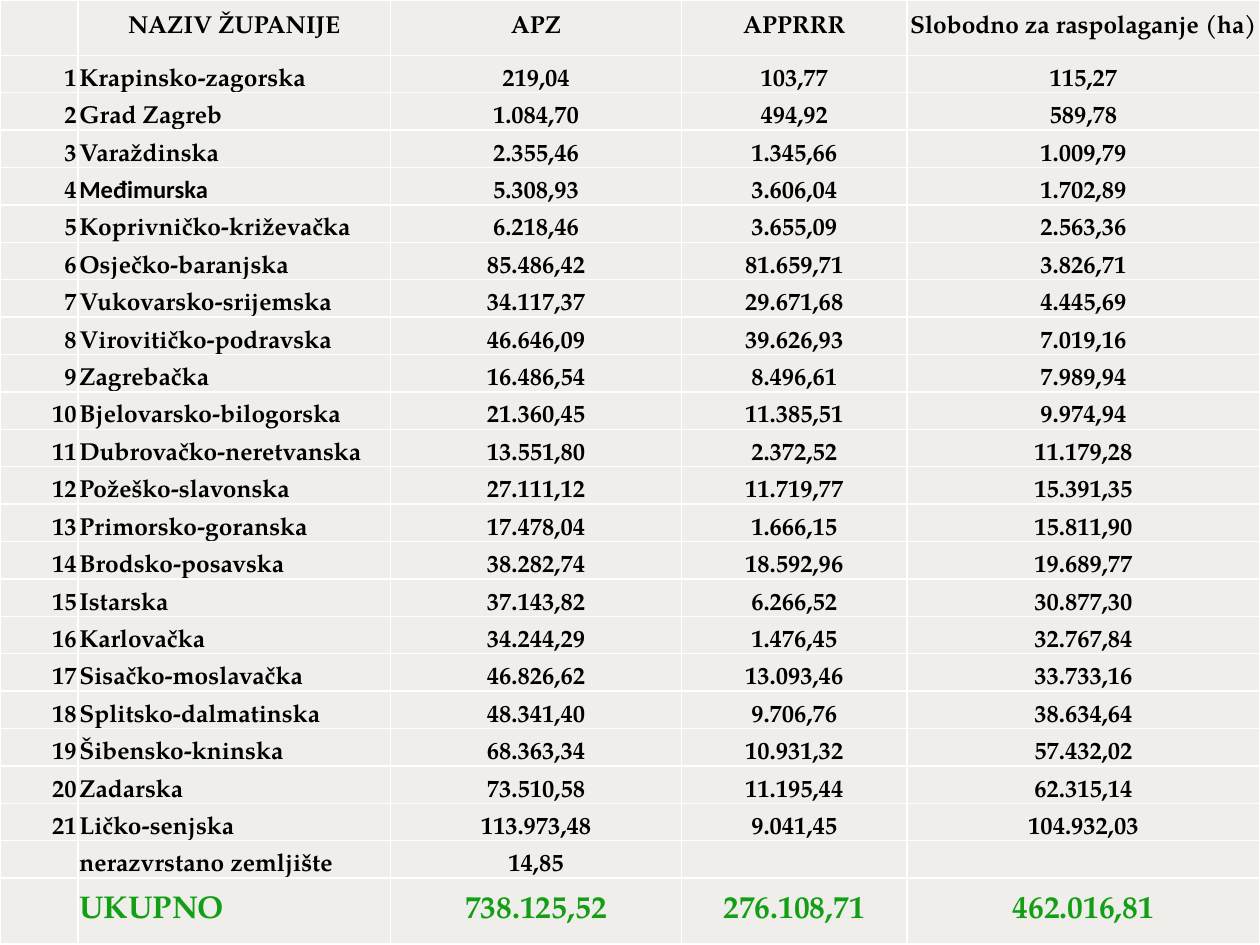
"""Build a slide with a table of agricultural land by Croatian county."""
from lxml.etree import SubElement
from pptx import Presentation
from pptx.dml.color import RGBColor
from pptx.enum.text import MSO_ANCHOR as Anchor, PP_ALIGN as Align
from pptx.oxml import parse_xml
from pptx.oxml.ns import nsdecls, qn
from pptx.util import Pt

HEADER = ("", "NAZIV ŽUPANIJE", "APZ", "APPRRR", "Slobodno za raspolaganje (ha)")
COUNTIES = [
    ("Krapinsko-zagorska", "219,04", "103,77", "115,27"),
    ("Grad Zagreb", "1.084,70", "494,92", "589,78"),
    ("Varaždinska", "2.355,46", "1.345,66", "1.009,79"),
    ("Međimurska", "5.308,93", "3.606,04", "1.702,89"),
    ("Koprivničko-križevačka", "6.218,46", "3.655,09", "2.563,36"),
    ("Osječko-baranjska", "85.486,42", "81.659,71", "3.826,71"),
    ("Vukovarsko-srijemska", "34.117,37", "29.671,68", "4.445,69"),
    ("Virovitičko-podravska", "46.646,09", "39.626,93", "7.019,16"),
    ("Zagrebačka", "16.486,54", "8.496,61", "7.989,94"),
    ("Bjelovarsko-bilogorska", "21.360,45", "11.385,51", "9.974,94"),
    ("Dubrovačko-neretvanska", "13.551,80", "2.372,52", "11.179,28"),
    ("Požeško-slavonska", "27.111,12", "11.719,77", "15.391,35"),
    ("Primorsko-goranska", "17.478,04", "1.666,15", "15.811,90"),
    ("Brodsko-posavska", "38.282,74", "18.592,96", "19.689,77"),
    ("Istarska", "37.143,82", "6.266,52", "30.877,30"),
    ("Karlovačka", "34.244,29", "1.476,45", "32.767,84"),
    ("Sisačko-moslavačka", "46.826,62", "13.093,46", "33.733,16"),
    ("Splitsko-dalmatinska", "48.341,40", "9.706,76", "38.634,64"),
    ("Šibensko-kninska", "68.363,34", "10.931,32", "57.432,02"),
    ("Zadarska", "73.510,58", "11.195,44", "62.315,14"),
    ("Ličko-senjska", "113.973,48", "9.041,45", "104.932,03"),
]
UNSORTED = ("", "nerazvrstano zemljište", "14,85", "", "")
TOTAL = ("", "UKUPNO", "738.125,52", "276.108,71", "462.016,81")

WIDTH, HEIGHT = 720, 540
COLUMN_WIDTHS = (44.6, 178.6, 166.3, 128.9, 201.6)
HEADER_HEIGHT, TOTAL_HEIGHT = 31.6, 37.6
ALIGNMENTS = (Align.RIGHT, Align.LEFT, Align.CENTER, Align.CENTER, Align.CENTER)
FONT = "TeX Gyre Pagella"
FONT_EXCEPTIONS = {"Međimurska": "Calibri"}
BLACK = RGBColor(0x00, 0x00, 0x00)
GREEN = RGBColor(0x12, 0x9E, 0x15)
SAND = RGBColor(0xF0, 0xEE, 0xEA)
WHITE = RGBColor(0xFF, 0xFF, 0xFF)


def add_borders(cell):
    properties = cell._tc.get_or_add_tcPr()
    for index, side in enumerate(("lnL", "lnR", "lnT", "lnB")):
        properties.insert(index, parse_xml(
            f'<a:{side} {nsdecls("a")} w="{Pt(1)}"><a:solidFill>'
            f'<a:srgbClr val="{WHITE}"/></a:solidFill></a:{side}>'))


def fill_cell(cell, text, alignment, anchor, size, color):
    cell.fill.solid()
    cell.fill.fore_color.rgb = SAND
    add_borders(cell)
    cell.margin_left = cell.margin_right = cell.margin_top = Pt(0.75)
    cell.margin_bottom = 0
    cell.vertical_anchor = anchor
    para = cell.text_frame.paragraphs[0]
    if not text:
        SubElement(para._p, qn("a:endParaRPr")).set("sz", str(size * 100))
        return
    para.text = text
    para.alignment = alignment
    font = para.runs[0].font
    font.name = FONT_EXCEPTIONS.get(text, FONT)
    font.size = Pt(size)
    font.bold = True
    font.color.rgb = color


def main():
    deck = Presentation()
    deck.slide_width, deck.slide_height = Pt(WIDTH), Pt(HEIGHT)
    page = deck.slides.add_slide(deck.slide_layouts[6])
    numbered = [(str(number), *county) for number, county in enumerate(COUNTIES, 1)]
    rows = [HEADER, *numbered, UNSORTED, TOTAL]
    last = len(rows) - 1
    body_height = (HEIGHT - HEADER_HEIGHT - TOTAL_HEIGHT) / (last - 1)

    table = page.shapes.add_table(
        len(rows), len(HEADER), 0, 0, Pt(WIDTH), Pt(HEIGHT)).table
    table.first_row = table.horz_banding = False
    for column, width in zip(table.columns, COLUMN_WIDTHS):
        column.width = Pt(width)

    for row_index, values in enumerate(rows):
        height, anchor, size, color = body_height, Anchor.BOTTOM, 14, BLACK
        if row_index == 0:
            height, anchor = HEADER_HEIGHT, Anchor.MIDDLE
        elif row_index == last:
            height, anchor, size, color = TOTAL_HEIGHT, Anchor.MIDDLE, 18, GREEN
        table.rows[row_index].height = Pt(height)
        for column_index, text in enumerate(values):
            alignment = Align.CENTER if row_index == 0 else ALIGNMENTS[column_index]
            fill_cell(table.cell(row_index, column_index), text,
                      alignment, anchor, size, color)
    deck.save("out.pptx")


if __name__ == "__main__":
    main()
